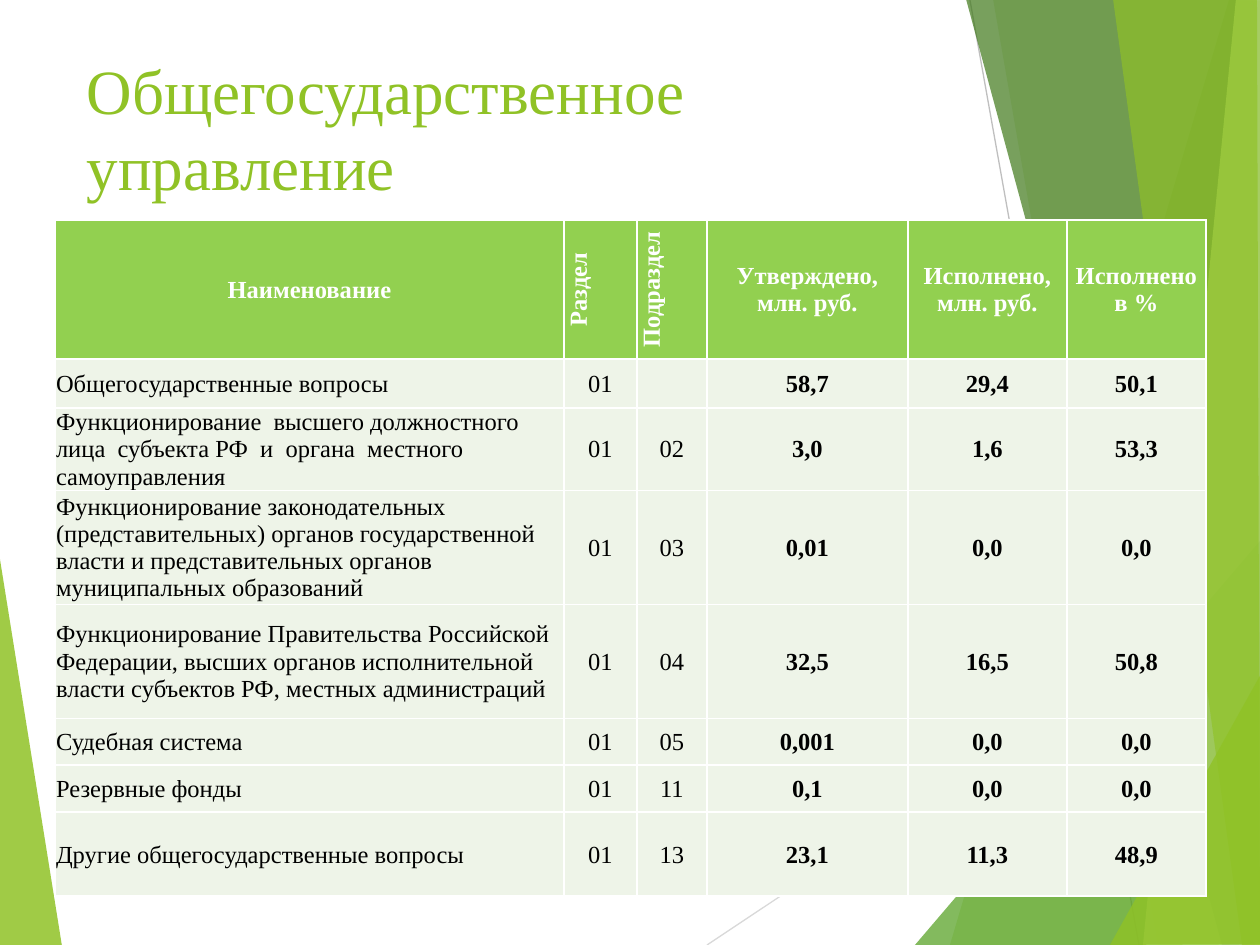
from lxml import etree
from pptx import Presentation, util as u
from pptx.dml.color import RGBColor
from pptx.enum import shapes, text
from pptx.oxml.ns import qn

THEME = {
    "font": "Times New Roman", "title_size": 36, "table_size": 14,
    "accent": "90C226", "header": "92D050", "body": "EEF4E8",
    "white": "FFFFFF", "black": "000000",
    "leaf": "54A021", "forest": "3F7819", "lime": "C0E474",
    "silver": "D9D9D9", "gray": "BFBFBF",
}
PX = 914400 / 126
SLIDE = (1260, 945)

TITLE = "Общегосударственное управление"
TITLE_BOX = (74, 37, 874, 181)
HEADERS = ["Наименование", "Раздел", "Подраздел", "Утверждено,\nмлн. руб.",
           "Исполнено,\nмлн. руб.", "Исполнено в %"]
ROWS = [
    ("Общегосударственные вопросы", "01", "", "58,7", "29,4", "50,1"),
    ("Функционирование  высшего должностного  лица  субъекта РФ  и  органа  местного  самоуправления",
     "01", "02", "3,0", "1,6", "53,3"),
    ("Функционирование законодательных (представительных) органов государственной власти "
     "и представительных органов муниципальных образований",
     "01", "03", "0,01", "0,0", "0,0"),
    ("Функционирование Правительства Российской Федерации, высших органов исполнительной "
     "власти субъектов РФ, местных администраций",
     "01", "04", "32,5", "16,5", "50,8"),
    ("Судебная система", "01", "05", "0,001", "0,0", "0,0"),
    ("Резервные фонды", "01", "11", "0,1", "0,0", "0,0"),
    ("Другие общегосударственные вопросы", "01", "13", "23,1", "11,3", "48,9"),
]
TABLE_AT = (55, 220)
COLUMN_WIDTHS = [509, 73, 70, 201, 159, 139]
ROW_HEIGHTS = [139, 49, 82, 114, 114, 47, 47, 84]
VERTICAL_COLUMNS = (1, 2)
FIRST_AMOUNT_COLUMN = 3

LEFT_FACET = ("accent", 85, [(-1, 553), (62, 946), (-1, 945)])
RAYS = [("silver", (707, 945), (1261, 576)), ("gray", (970, 0), (1139, 945))]
RIGHT_FACETS = [
    ("accent", 30, [(1229, 0), (950, 945), (1262, 946), (1261, 1)]),
    ("accent", 20, [(993, -1), (1158, 945), (1261, 945), (1261, -1)]),
    ("leaf", 72, [(915, 945), (1260, 541), (1261, 945)]),
    ("forest", 70, [(966, -1), (1222, 945), (1261, 944), (1261, -1)]),
    ("lime", 70, [(1236, -1), (1143, 945), (1261, 945), (1260, -1)]),
    ("accent", 65, [(1113, -1), (1242, 945), (1260, 945), (1257, -1)]),
    ("accent", 80, [(1110, 945), (1261, 674), (1261, 944)]),
]


def emu(*lengths):
    return [u.Emu(round(length * PX)) for length in lengths]


def color(name):
    return RGBColor.from_string(THEME[name])


def style(font, size, tint, bold=False):
    font.name = THEME["font"]
    font.size = u.Pt(THEME[size])
    font.color.rgb = color(tint)
    font.bold = bold


def add_facet(page, tint, opacity, points):
    builder = page.shapes.build_freeform(*points[0], scale=PX)
    builder.add_line_segments(points[1:], close=True)
    facet = builder.convert_to_shape()
    facet.shadow.inherit = False
    facet.line.fill.background()
    facet.fill.solid()
    facet.fill.fore_color.rgb = color(tint)
    swatch = next(facet._element.spPr.iter(qn("a:srgbClr")))
    etree.SubElement(swatch, qn("a:alpha"), val=str(opacity * 1000))


def add_ray(page, tint, start, end):
    ray = page.shapes.add_connector(shapes.MSO_CONNECTOR.STRAIGHT, *emu(*start, *end))
    ray.line.color.rgb = color(tint)
    ray.line.width = u.Pt(0.75)
    etree.SubElement(ray._element.spPr, qn("a:effectLst"))


def add_borders(cell):
    properties = cell._tc.get_or_add_tcPr()
    for side in ("lnL", "lnR", "lnT", "lnB"):
        border = etree.SubElement(properties, qn("a:" + side), w=str(u.Pt(1)))
        paint = etree.SubElement(border, qn("a:solidFill"))
        etree.SubElement(paint, qn("a:srgbClr"), val=THEME["white"])


def fill_cell(cell, wording, row, column):
    header = row == 0
    add_borders(cell)
    cell.fill.solid()
    cell.fill.fore_color.rgb = color("header" if header else "body")
    cell.margin_left, cell.margin_right, cell.margin_top, cell.margin_bottom = emu(1, 1, 1, 0)
    cell.vertical_anchor = text.MSO_ANCHOR.MIDDLE
    if header and column in VERTICAL_COLUMNS:
        cell._tc.tcPr.set("vert", "vert270")
    cell.text = wording
    centered = header or column > 0
    for para in cell.text_frame.paragraphs:
        para.alignment = text.PP_ALIGN.CENTER if centered else text.PP_ALIGN.LEFT
        style(para.font, "table_size", "white" if header else "black",
              header or column >= FIRST_AMOUNT_COLUMN)


def add_budget_table(page):
    content = [HEADERS, *ROWS]
    size = (sum(COLUMN_WIDTHS), sum(ROW_HEIGHTS))
    frame = page.shapes.add_table(len(content), len(HEADERS), *emu(*TABLE_AT, *size))
    table = frame.table
    table.horz_banding = False
    for column, width in zip(table.columns, emu(*COLUMN_WIDTHS)):
        column.width = width
    for row, height in zip(table.rows, emu(*ROW_HEIGHTS)):
        row.height = height
    for row, values in enumerate(content):
        for column, wording in enumerate(values):
            fill_cell(table.cell(row, column), wording, row, column)


def set_title(page):
    title = page.shapes.title
    title.left, title.top, title.width, title.height = emu(*TITLE_BOX)
    title.text = TITLE
    frame = title.text_frame
    frame.word_wrap = True
    frame.auto_size = text.MSO_AUTO_SIZE.NONE
    frame.vertical_anchor = text.MSO_ANCHOR.MIDDLE
    para = frame.paragraphs[0]
    para.alignment = text.PP_ALIGN.LEFT
    style(para.font, "title_size", "accent")
    page.shapes._spTree.append(title._element)


def main():
    deck = Presentation()
    deck.slide_width, deck.slide_height = emu(*SLIDE)
    page = deck.slides.add_slide(deck.slide_layouts[5])
    add_facet(page, *LEFT_FACET)
    for ray in RAYS:
        add_ray(page, *ray)
    for facet in RIGHT_FACETS:
        add_facet(page, *facet)
    set_title(page)
    add_budget_table(page)
    deck.save("out.pptx")


if __name__ == "__main__":
    main()
